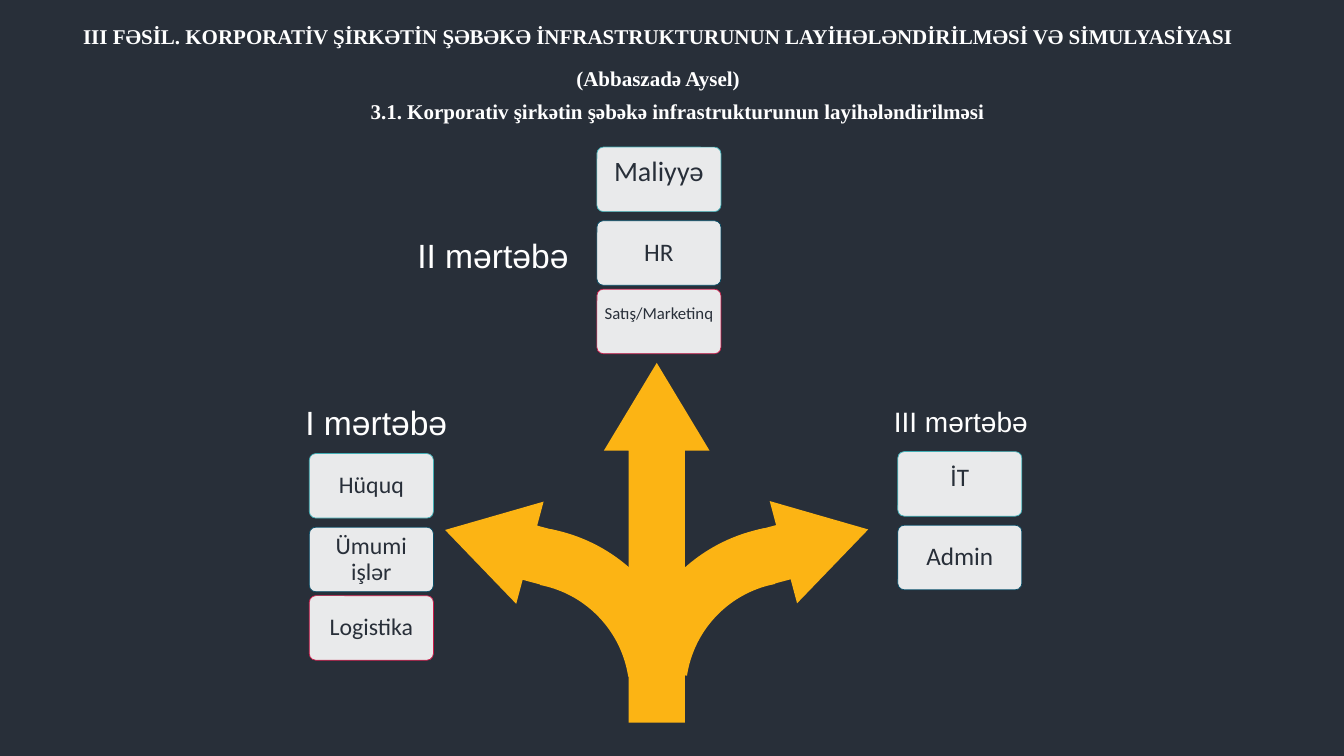
from dataclasses import dataclass

import pptx
import pptx.dml.color
import pptx.enum.shapes
import pptx.enum.text
import pptx.oxml
import pptx.oxml.ns
import pptx.util

Pt = pptx.util.Pt
Shape = pptx.enum.shapes.MSO_SHAPE
Align = pptx.enum.text.PP_ALIGN
Anchor = pptx.enum.text.MSO_ANCHOR

COLORS = {
    "background": "282F39", "arrow": "FCB414", "white": "FFFFFF",
    "teal": "42AFB6", "navy": "074D67", "crimson": "CB1B4A",
}
CARD_W, CARD_H = 88.6, 46.1
# Every column stacks its cards at the same offsets and outline colours.
CARD_ROWS = [(0, "teal"), (52.6, "navy"), (101.5, "crimson")]
ARC_ADJ = (159.5, 201.77, 0.17)
ARROW_ADJ = (0.53, 0.83)


@dataclass
class Card:
    text: str
    size: float = 17
    lift: float = 0


@dataclass
class Floor:
    name: str
    size: float
    name_box: tuple[float, float, float, float]
    left: float
    top: float
    cards: list[Card]


@dataclass
class ArrowPart:
    kind: Shape
    box: tuple[float, float, float, float]
    rotation: float
    adjustments: tuple[float, ...]
    flip: bool = False


FLOORS = [
    Floor("I mərtəbə", 24, (211, 283.7, 136, 36), 221, 324,
          [Card("Hüquq"), Card("Ümumi işlər"), Card("Logistika")]),
    Floor("II mərtəbə", 24, (291, 164.2, 200, 36), 426.4, 105.1,
          [Card("Maliyyə", 20, 5), Card("HR", 18), Card("Satış/Marketinq", 12, 5.5)]),
    Floor("III mərtəbə", 20, (631.4, 285.1, 199.4, 31.7), 641.3, 322.6,
          [Card("İT", 18, 4), Card("Admin", 18)]),
]
ARROW_PARTS = [
    ArrowPart(Shape.BLOCK_ARC, (251.3, 375.8, 239, 239), 15, ARC_ADJ),
    ArrowPart(Shape.DOWN_ARROW, (317.5, 349.9, 75.6, 77.4), 105, ARROW_ADJ),
    ArrowPart(Shape.BLOCK_ARC, (449.3, 375.1, 238.7, 239), 345, ARC_ADJ, flip=True),
    ArrowPart(Shape.DOWN_ARROW, (545, 349.5, 75.6, 77.4), 255, ARROW_ADJ),
    ArrowPart(Shape.DOWN_ARROW, (431.3, 259.2, 75.6, 257), 180, ARROW_ADJ),
]
TITLE_LINES = [
    "III FƏSİL. KORPORATİV ŞİRKƏTİN ŞƏBƏKƏ İNFRASTRUKTURUNUN LAYİHƏLƏNDİRİLMƏSİ VƏ SİMULYASİYASI",
    "(Abbaszadə Aysel)",
    "3.1. Korporativ şirkətin şəbəkə infrastrukturunun layihələndirilməsi",
]


def rgb(name: str) -> pptx.dml.color.RGBColor:
    return pptx.dml.color.RGBColor.from_string(COLORS[name])


def write(p, text: str, *, size: float, font: str, color: str = "white",
          bold: bool = False, align: Align = Align.LEFT) -> None:
    p.alignment = align
    r = p.add_run()
    r.text = text
    r.font.size = Pt(size)
    r.font.name = font
    r.font.bold = bold
    r.font.color.rgb = rgb(color)


def add_text_frame(slide, box: tuple[float, float, float, float]):
    tf = slide.shapes.add_textbox(*map(Pt, box)).text_frame
    tf.word_wrap = True
    tf.auto_size = pptx.enum.text.MSO_AUTO_SIZE.SHAPE_TO_FIT_TEXT
    return tf


def add_filled(slide, kind: Shape, box: tuple[float, float, float, float],
               color: str, adjustments: tuple[float, ...]):
    s = slide.shapes.add_shape(kind, *map(Pt, box))
    s.shadow.inherit = False
    s.fill.solid()
    s.fill.fore_color.rgb = rgb(color)
    s.line.fill.background()
    for i, value in enumerate(adjustments):
        s.adjustments[i] = value
    return s


def add_arrow_part(slide, part: ArrowPart) -> None:
    s = add_filled(slide, part.kind, part.box, "arrow", part.adjustments)
    s.rotation = part.rotation
    if part.flip:
        s._element.spPr.find(pptx.oxml.ns.qn("a:xfrm")).set("flipH", "1")


def add_card(slide, card: Card, left: float, top: float, outline: str) -> None:
    """Draw a rounded card; lift raises its text above the middle."""
    s = add_filled(slide, Shape.ROUNDED_RECTANGLE, (left, top, CARD_W, CARD_H),
                   "white", (0.1,))
    color = s._element.spPr.find(".//" + pptx.oxml.ns.qn("a:srgbClr"))
    pptx.oxml.xmlchemy.OxmlElement  # noqa: B018
    alpha = color.makeelement(pptx.oxml.ns.qn("a:alpha"), {"val": "90000"})
    color.append(alpha)
    s.line.color.rgb = rgb(outline)
    s.line.width = Pt(0.5)
    tf = s.text_frame
    tf.word_wrap = True
    tf.vertical_anchor = Anchor.MIDDLE
    tf.margin_left = tf.margin_right = Pt(3)
    tf.margin_top = Pt(1.5)
    tf.margin_bottom = Pt(1.5 + 2 * card.lift)
    p = tf.paragraphs[0]
    p.line_spacing = 0.9
    write(p, card.text, size=card.size, font="Calibri", color="background",
          align=Align.CENTER)


def add_floor(slide, floor: Floor) -> None:
    tf = add_text_frame(slide, floor.name_box)
    write(tf.paragraphs[0], floor.name, size=floor.size, font="Arial")
    for card, (offset, outline) in zip(floor.cards, CARD_ROWS):
        add_card(slide, card, floor.left, floor.top + offset, outline)


def add_title(slide) -> None:
    tf = add_text_frame(slide, (5, 13, 930.2, 79.9))
    for i, line in enumerate(TITLE_LINES):
        p = tf.add_paragraph() if i else tf.paragraphs[0]
        if i < 2:
            p.space_before = p.space_after = Pt(6)
        write(p, line, size=15, font="Times New Roman", bold=True, align=Align.CENTER)
    p._p.get_or_add_pPr().set("indent", str(Pt(28)))


def main() -> None:
    prs = pptx.Presentation()
    prs.slide_width, prs.slide_height = Pt(960), Pt(540)
    slide = prs.slides.add_slide(prs.slide_layouts[6])
    slide.background.fill.solid()
    slide.background.fill.fore_color.rgb = rgb("background")
    for part in ARROW_PARTS:
        add_arrow_part(slide, part)
    for floor in FLOORS:
        add_floor(slide, floor)
    add_title(slide)
    prs.save("out.pptx")


if __name__ == "__main__":
    main()
